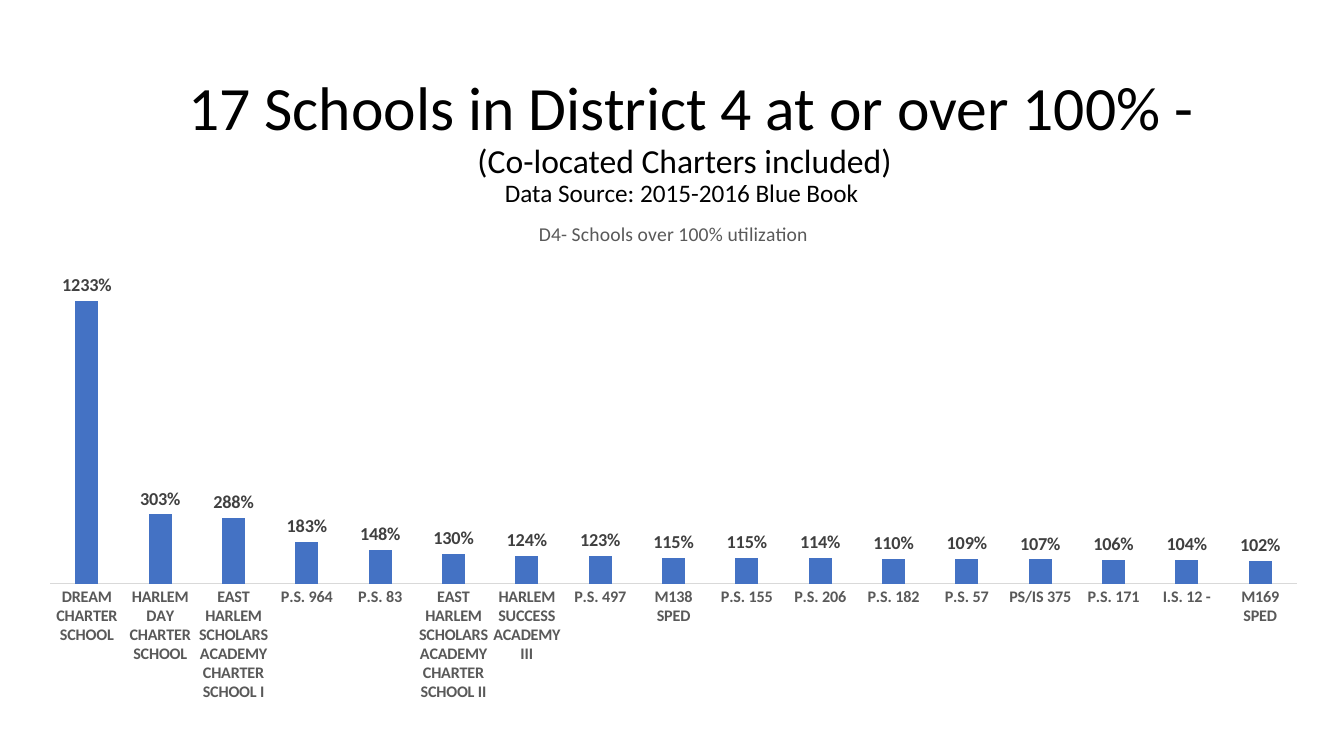
from dataclasses import dataclass

from lxml import etree
from pptx import Presentation
from pptx.chart import data as chart_data
from pptx.dml import color
from pptx.enum import chart as charts, text
from pptx.oxml import ns
from pptx.util import Inches, Pt

COLORS = {"title": "000000", "bar": "4472C4", "axis": "D9D9D9",
          "muted": "595959", "value": "404040"}
FONT = "Calibri"


@dataclass
class TitleLine:
    words: str
    size: int


@dataclass
class School:
    name: str
    utilization: float


TITLE_LINES = [
    TitleLine(" 17 Schools in District 4 at or over 100% -", 44),
    TitleLine("(Co-located Charters included)", 24),
    TitleLine("Data Source: 2015-2016 Blue Book ", 18),
]

SCHOOLS = [
    School("DREAM CHARTER SCHOOL", 12.33),
    School("HARLEM DAY CHARTER SCHOOL", 3.03),
    School("EAST HARLEM SCHOLARS ACADEMY CHARTER SCHOOL I", 2.88),
    School("P.S. 964", 1.83),
    School("P.S. 83", 1.48),
    School("EAST HARLEM SCHOLARS ACADEMY CHARTER SCHOOL II", 1.30),
    School("HARLEM SUCCESS ACADEMY III", 1.24),
    School("P.S. 497", 1.23),
    School("M138 SPED", 1.15),
    School("P.S. 155", 1.15),
    School("P.S. 206", 1.14),
    School("P.S. 182", 1.10),
    School("P.S. 57", 1.09),
    School("PS/IS 375", 1.07),
    School("P.S. 171", 1.06),
    School("I.S. 12 -", 1.04),
    School("M169 SPED", 1.02),
]


def set_attributes(target, values: dict) -> None:
    for name, value in values.items():
        setattr(target, name, value)


def format_font(font, size: float, shade: str, bold: bool = False) -> None:
    set_attributes(font, {"name": FONT, "size": Pt(size), "bold": bold})
    font.color.rgb = color.RGBColor.from_string(COLORS[shade])


def draw_title(page) -> None:
    box = page.shapes.title
    set_attributes(box, {"left": Inches(1.04), "top": Inches(0.69),
                         "width": Inches(11.5), "height": Inches(1.45)})
    set_attributes(box.text_frame, {
        "word_wrap": True,
        "auto_size": text.MSO_AUTO_SIZE.NONE,
        "vertical_anchor": text.MSO_ANCHOR.MIDDLE,
    })
    para = box.text_frame.paragraphs[0]
    set_attributes(para, {"alignment": text.PP_ALIGN.CENTER, "line_spacing": 0.9})
    for index, line in enumerate(TITLE_LINES):
        if index:
            para.add_line_break()
        span = para.add_run()
        span.text = line.words
        format_font(span.font, line.size, "title")


def place_plot(chart, area: dict) -> None:
    plot_area = chart.plots[0]._element.getparent()
    for old in plot_area.findall(ns.qn("c:layout")):
        plot_area.remove(old)
    layout = etree.Element(ns.qn("c:layout"))
    manual = etree.SubElement(layout, ns.qn("c:manualLayout"))
    settings = {"layoutTarget": "inner", "xMode": "edge", "yMode": "edge", **area}
    for name, value in settings.items():
        etree.SubElement(manual, ns.qn(f"c:{name}"), val=str(value))
    plot_area.insert(0, layout)


def draw_chart(page) -> None:
    values = chart_data.CategoryChartData(number_format="0%")
    values.categories = [school.name for school in SCHOOLS]
    values.add_series("Utilization", [school.utilization for school in SCHOOLS])
    chart = page.shapes.add_chart(
        charts.XL_CHART_TYPE.COLUMN_CLUSTERED,
        Inches(0.24), Inches(2), Inches(12.88), Inches(5.06), values).chart
    format_font(chart.font, 10, "title")
    chart.has_legend = False
    chart.has_title = True
    para = chart.chart_title.text_frame.paragraphs[0]
    span = para.add_run()
    span.text = "D4- Schools over 100% utilization"
    format_font(span.font, 14, "muted")
    chart.chart_title.include_in_layout = False

    set_attributes(chart.value_axis, {
        "visible": False, "has_major_gridlines": False,
        "minimum_scale": 0, "maximum_scale": 14,
    })
    axis = chart.category_axis
    set_attributes(axis, {"major_tick_mark": charts.XL_TICK_MARK.NONE,
                          "minor_tick_mark": charts.XL_TICK_MARK.NONE})
    format_font(axis.tick_labels.font, 11.5, "muted", True)
    axis.format.line.width = Pt(0.75)
    axis.format.line.color.rgb = color.RGBColor.from_string(COLORS["axis"])

    plot = chart.plots[0]
    set_attributes(plot, {"gap_width": 219, "overlap": -27,
                          "vary_by_categories": False, "has_data_labels": True})
    bars = plot.series[0].format
    bars.fill.solid()
    bars.fill.fore_color.rgb = color.RGBColor.from_string(COLORS["bar"])
    set_attributes(plot.data_labels, {
        "show_value": True, "number_format": "0%",
        "number_format_is_linked": False,
        "position": charts.XL_LABEL_POSITION.OUTSIDE_END,
    })
    format_font(plot.data_labels.font, 13, "value", True)
    place_plot(chart, {"x": 0.02, "y": 0.12, "w": 0.96, "h": 0.63})


def main() -> None:
    deck = Presentation()
    set_attributes(deck, {"slide_width": Inches(13.33), "slide_height": Inches(7.5)})
    page = deck.slides.add_slide(deck.slide_layouts.get_by_name("Title Only"))
    draw_title(page)
    draw_chart(page)
    deck.save("out.pptx")


if __name__ == "__main__":
    main()
